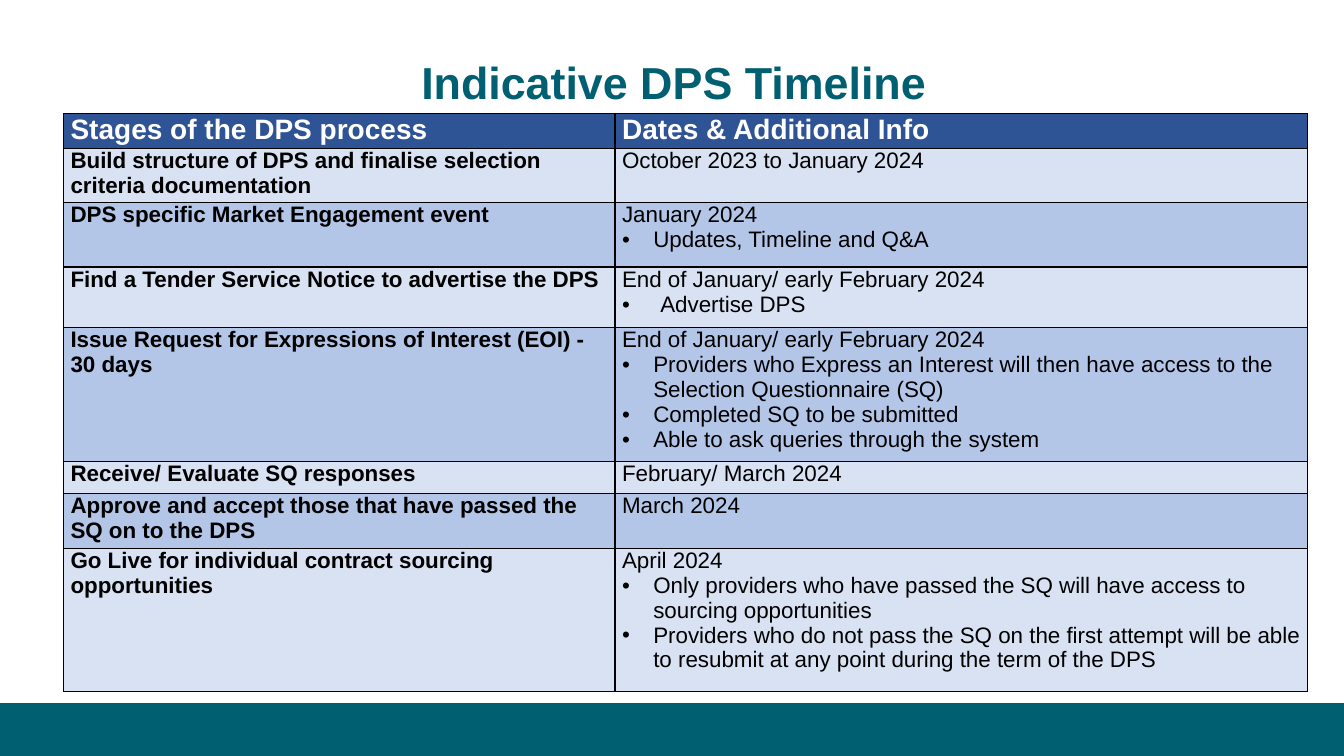
from dataclasses import dataclass

from lxml import etree
from pptx import Presentation
from pptx.dml.color import RGBColor
from pptx.enum.shapes import MSO_SHAPE
from pptx.enum.text import MSO_ANCHOR, PP_ALIGN
from pptx.oxml.ns import qn
from pptx.util import Inches, Pt

RECTANGLE = MSO_SHAPE.RECTANGLE
CENTER = PP_ALIGN.CENTER
MIDDLE = MSO_ANCHOR.MIDDLE
TITLE_ONLY = 5


@dataclass(frozen=True)
class Theme:
    font: str = "Arial"
    teal: str = "006072"
    header: str = "2F5496"
    bands: tuple = ("D9E2F3", "B4C6E7")
    light: str = "FFFFFF"
    dark: str = "000000"
    title_size: int = 32
    header_size: int = 20
    body_size: int = 16


THEME = Theme()
WIDTH, HEIGHT = Inches(13.33), Inches(7.5)
COLUMN_WIDTHS = (5.47, 6.87)
HEADER_HEIGHT = 0.34
HEADERS = ("Stages of the DPS process", "Dates & Additional Info")
WIDE_INDENT, INDENT = 0.38, 0.31

# Row height, stage, date, bullet indent, bullets
STAGES = (
    (0.54, "Build structure of DPS and finalise selection criteria documentation",
     "October 2023 to January 2024", INDENT, ()),
    (0.64, "DPS specific Market Engagement event",
     "January 2024", INDENT, ("Updates, Timeline and Q&A",)),
    (0.6, "Find a Tender Service Notice to advertise the DPS",
     "End of January/ early February 2024", WIDE_INDENT, ("Advertise DPS",)),
    (1.33, "Issue Request for Expressions of Interest (EOI) - 30 days",
     "End of January/ early February 2024", INDENT,
     ("Providers who Express an Interest will then have access to the "
      "Selection Questionnaire (SQ)",
      "Completed SQ to be submitted",
      "Able to ask queries through the system")),
    (0.32, "Receive/ Evaluate SQ responses", "February/ March 2024", INDENT, ()),
    (0.54, "Approve and accept those that have passed the SQ on to the DPS",
     "March 2024", INDENT, ()),
    (1.42, "Go Live for individual contract sourcing opportunities",
     "April 2024", INDENT,
     ("Only providers who have passed the SQ will have access to sourcing opportunities",
      "Providers who do not pass the SQ on the first attempt will be able to "
      "resubmit at any point during the term of the DPS")),
)


def set_font(paragraph, size, color, bold):
    font = paragraph.font
    font.name, font.size, font.bold = THEME.font, Pt(size), bold
    font.color.rgb = RGBColor.from_string(color)


def add_bullet(paragraph, indent):
    properties = paragraph._p.get_or_add_pPr()
    properties.set("marL", str(Inches(indent)))
    properties.set("indent", str(-Inches(indent)))
    bullet_font = etree.SubElement(properties, qn("a:buFont"))
    bullet_font.set("typeface", THEME.font)
    etree.SubElement(properties, qn("a:buChar")).set("char", "•")


def add_borders(cell):
    properties = cell._tc.get_or_add_tcPr()
    for side in ("lnL", "lnR", "lnT", "lnB"):
        line = etree.SubElement(properties, qn(f"a:{side}"))
        line.set("w", str(Pt(1)))
        fill = etree.SubElement(line, qn("a:solidFill"))
        etree.SubElement(fill, qn("a:srgbClr")).set("val", THEME.dark)


def fill_cell(cell, text, fill, size, color, bold, bullets=(), indent=INDENT):
    cell.margin_left = cell.margin_right = Inches(0.07)
    cell.margin_top = cell.margin_bottom = 0
    add_borders(cell)
    cell.fill.solid()
    cell.fill.fore_color.rgb = RGBColor.from_string(fill)
    frame = cell.text_frame
    paragraph = frame.paragraphs[0]
    paragraph.text = text
    set_font(paragraph, size, color, bold)
    for bullet in bullets:
        paragraph = frame.add_paragraph()
        paragraph.text = bullet
        add_bullet(paragraph, indent)
        set_font(paragraph, size, color, bold)


def format_title(title, text):
    title.left, title.top = Inches(0.96), Inches(0.49)
    title.width, title.height = Inches(11.45), Inches(0.64)
    frame = title.text_frame
    frame.word_wrap = True
    frame.vertical_anchor = MIDDLE
    paragraph = frame.paragraphs[0]
    paragraph.text = text
    paragraph.alignment = CENTER
    set_font(paragraph, THEME.title_size, THEME.teal, True)


def add_footer_bar(slide):
    top = Inches(6.98)
    bar = slide.shapes.add_shape(RECTANGLE, 0, top, WIDTH, HEIGHT - top)
    bar.shadow.inherit = False
    bar.fill.solid()
    bar.fill.fore_color.rgb = RGBColor.from_string(THEME.teal)
    bar.line.color.rgb = RGBColor.from_string(THEME.teal)
    bar.line.width = Pt(1)


def add_timeline(slide):
    heights = [HEADER_HEIGHT] + [stage[0] for stage in STAGES]
    table = slide.shapes.add_table(
        len(heights), len(COLUMN_WIDTHS), Inches(0.63), Inches(1.13),
        Inches(sum(COLUMN_WIDTHS)), Inches(sum(heights))).table
    table.horz_banding = False
    for column, width in zip(table.columns, COLUMN_WIDTHS):
        column.width = Inches(width)
    for row, height in zip(table.rows, heights):
        row.height = Inches(height)
    for column, text in enumerate(HEADERS):
        fill_cell(table.cell(0, column), text, THEME.header,
                  THEME.header_size, THEME.light, True)
    for index, (_, stage, date, indent, bullets) in enumerate(STAGES):
        band = THEME.bands[index % 2]
        style = (band, THEME.body_size, THEME.dark)
        fill_cell(table.cell(index + 1, 0), stage, *style, True)
        fill_cell(table.cell(index + 1, 1), date, *style, False, bullets, indent)


def main():
    presentation = Presentation()
    presentation.slide_width, presentation.slide_height = WIDTH, HEIGHT
    slide = presentation.slides.add_slide(presentation.slide_layouts[TITLE_ONLY])
    add_footer_bar(slide)
    format_title(slide.shapes.title, "Indicative DPS Timeline")
    add_timeline(slide)
    presentation.save("out.pptx")


if __name__ == "__main__":
    main()
